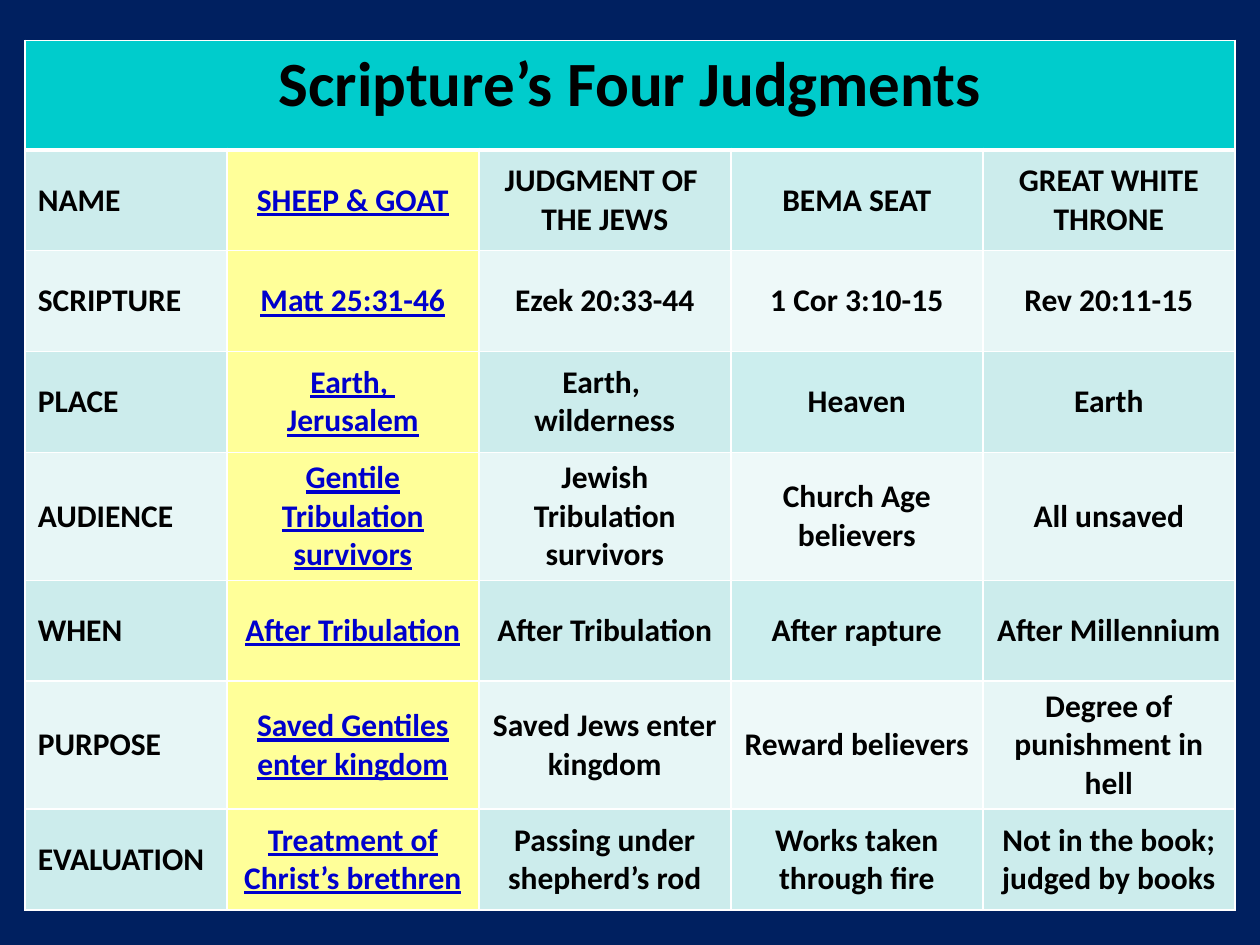
from lxml.etree import SubElement
from pptx import Presentation
from pptx.dml.color import RGBColor
from pptx.enum.text import MSO_ANCHOR, PP_ALIGN
from pptx.oxml.ns import qn
from pptx.util import Inches, Pt

HEADING = "Scripture’s Four Judgments"
JUDGMENTS = [
    ["NAME", "SHEEP & GOAT", "JUDGMENT OF \nTHE JEWS", "BEMA SEAT", "GREAT WHITE THRONE"],
    ["SCRIPTURE", "Matt 25:31-46", "Ezek 20:33-44", "1 Cor 3:10-15", "Rev 20:11-15"],
    ["PLACE", "Earth, \nJerusalem", "Earth, \nwilderness", "Heaven", "Earth"],
    ["AUDIENCE", "Gentile Tribulation survivors", "Jewish Tribulation survivors",
     "Church Age believers", "All unsaved"],
    ["WHEN", "After Tribulation", "After Tribulation", "After rapture", "After Millennium"],
    ["PURPOSE", "Saved Gentiles enter kingdom", "Saved Jews enter kingdom",
     "Reward believers", "Degree of punishment in hell"],
    ["EVALUATION", "Treatment of Christ’s brethren", "Passing under shepherd’s rod",
     "Works taken through fire", "Not in the book; judged by books"],
]
COLUMN_WIDTHS = [1.6, 2, 2, 2, 2]
ROW_HEIGHTS = [0.87] + [0.8] * len(JUDGMENTS)
SHEEP_COLUMN, BEMA_COLUMN = 1, 3
BANDS = [("CCECEC", "CCEEEE"), ("E7F6F6", "EEF9F9")]


def color(value):
    return RGBColor.from_string(value)


class JudgmentSlide:
    base = {"name": "Calibri", "bold": True, "size": Pt(18)}
    heading = {"size": Pt(36)}
    sheep = {"underline": True}
    ink, link, rule = "000000", "0000CC", "FFFFFF"

    def __init__(self, presentation, background):
        self.slide = presentation.slides.add_slide(presentation.slide_layouts[6])
        fill = self.slide.background.fill
        fill.solid()
        fill.fore_color.rgb = color(background)

    def table(self, left, top, widths, heights):
        table = self.slide.shapes.add_table(
            len(heights), len(widths), Inches(left), Inches(top),
            Inches(sum(widths)), Inches(sum(heights))).table
        for column, width in zip(table.columns, widths):
            column.width = Inches(width)
        for row, height in zip(table.rows, heights):
            row.height = Inches(height)
        return table

    def borders(self, cell, top=1, bottom=1):
        properties = cell._tc.get_or_add_tcPr()
        for side, width in {"L": 1, "R": 1, "T": top, "B": bottom}.items():
            line = SubElement(properties, qn(f"a:ln{side}"), w=str(Pt(width)))
            solid = SubElement(line, qn("a:solidFill"))
            SubElement(solid, qn("a:srgbClr"), val=self.rule)

    def fill(self, cell, value):
        cell.fill.solid()
        cell.fill.fore_color.rgb = color(value)

    def text(self, cell, words, align, ink, extra):
        cell.text_frame.text = words
        for paragraph in cell.text_frame.paragraphs:
            paragraph.alignment = align
            for run in paragraph.runs:
                for key, value in {**self.base, **extra}.items():
                    setattr(run.font, key, value)
                run.font.color.rgb = color(ink)

    def heading_row(self, table, words):
        cells = list(table.rows[0].cells)
        for cell in cells:
            self.borders(cell, bottom=3)
            self.fill(cell, "00CCCC")
        cells[0].merge(cells[-1])
        self.text(cells[0], words, PP_ALIGN.CENTER, self.ink, self.heading)

    def judgment_row(self, table, number, entries):
        band, bema_band = BANDS[(number - 1) % 2]
        for column, words in enumerate(entries):
            cell = table.cell(number, column)
            is_sheep = column == SHEEP_COLUMN
            self.borders(cell, top=3 if number == 1 else 1)
            self.fill(cell, {SHEEP_COLUMN: "FFFF99", BEMA_COLUMN: bema_band}.get(column, band))
            cell.vertical_anchor = MSO_ANCHOR.MIDDLE
            self.text(cell, words, PP_ALIGN.CENTER if column else PP_ALIGN.LEFT,
                      self.link if is_sheep else self.ink, self.sheep if is_sheep else {})


def main():
    presentation = Presentation()
    presentation.slide_width = Inches(10)
    presentation.slide_height = Inches(7.5)
    page = JudgmentSlide(presentation, "002060")
    table = page.table(0.2, 0.32, COLUMN_WIDTHS, ROW_HEIGHTS)
    page.heading_row(table, HEADING)
    for number, entries in enumerate(JUDGMENTS, 1):
        page.judgment_row(table, number, entries)
    presentation.save("out.pptx")


if __name__ == "__main__":
    main()
